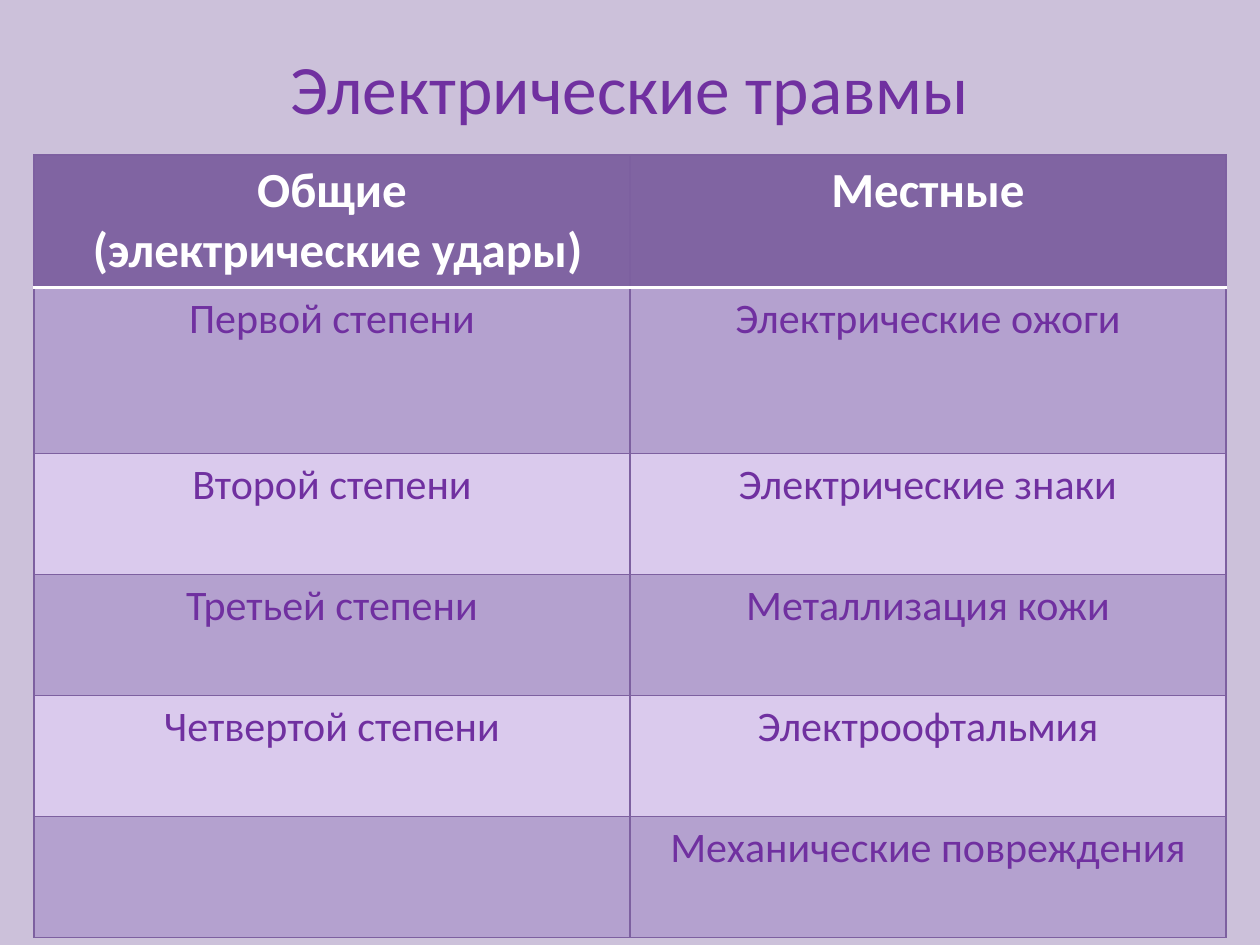
from lxml.etree import SubElement
from pptx import Presentation
from pptx.dml.color import RGBColor
from pptx.enum.text import MSO_ANCHOR, PP_ALIGN
from pptx.oxml.ns import qn
from pptx.util import Inches, Pt

FONT = "Calibri"
BACKGROUND = "CCC1DA"
PURPLE = "7030A0"
WHITE = "FFFFFF"
HEADER_FILL = "8064A2"
BAND_FILLS = ["B4A1CF", "DACAED"]
BORDER = "7D60A0"

ROWS = [
    ("Общие\n (электрические удары)", "Местные"),
    ("Первой степени", "Электрические ожоги"),
    ("Второй степени", "Электрические знаки"),
    ("Третьей степени", "Металлизация кожи"),
    ("Четвертой степени", "Электроофтальмия"),
    ("", "Механические повреждения"),
]
ROW_HEIGHTS = [1.05, 1.32] + [0.96] * 4
COLUMN_WIDTH = 4.73


def color(value):
    return RGBColor.from_string(value)


def write_text(frame, text, size, text_color, bold=False):
    frame.text = text
    for para in frame.paragraphs:
        para.alignment = PP_ALIGN.CENTER
        para.font.name = FONT
        para.font.size = Pt(size)
        para.font.bold = bold
        para.font.color.rgb = color(text_color)


def add_border(cell, side, line_color, width):
    line = SubElement(cell._tc.get_or_add_tcPr(), qn(f"a:ln{side}"), w=str(Pt(width)))
    fill = SubElement(line, qn("a:solidFill"))
    SubElement(fill, qn("a:srgbClr"), val=line_color)


def format_cell(cell, row, text):
    header = row == 0
    # Borders come before the fill in the cell properties
    for side in "LRTB":
        under_header = (row, side) in [(0, "B"), (1, "T")]
        add_border(cell, side, *((WHITE, 2) if under_header else (BORDER, 0.75)))
    cell.fill.solid()
    cell.fill.fore_color.rgb = color(HEADER_FILL if header else BAND_FILLS[(row - 1) % 2])
    write_text(cell.text_frame, text, 28 if header else 24,
               WHITE if header else PURPLE, bold=header)


def add_title(page, text):
    title = page.shapes.title
    title.left, title.top = Inches(0.5), Inches(0.3)
    title.width, title.height = Inches(9), Inches(0.77)
    title.text_frame.vertical_anchor = MSO_ANCHOR.MIDDLE
    write_text(title.text_frame, text, 39.6, PURPLE)


def add_injury_table(page):
    table = page.shapes.add_table(
        len(ROWS), 2, Inches(0.27), Inches(1.23),
        Inches(2 * COLUMN_WIDTH), Inches(sum(ROW_HEIGHTS))).table
    for column in table.columns:
        column.width = Inches(COLUMN_WIDTH)
    for row, texts in enumerate(ROWS):
        table.rows[row].height = Inches(ROW_HEIGHTS[row])
        for column, text in enumerate(texts):
            format_cell(table.cell(row, column), row, text)


def main():
    deck = Presentation()
    deck.slide_width, deck.slide_height = Inches(10), Inches(7.5)
    page = deck.slides.add_slide(deck.slide_layouts[5])
    page.background.fill.solid()
    page.background.fill.fore_color.rgb = color(BACKGROUND)
    add_title(page, "Электрические травмы")
    add_injury_table(page)
    deck.save("out.pptx")


if __name__ == "__main__":
    main()
